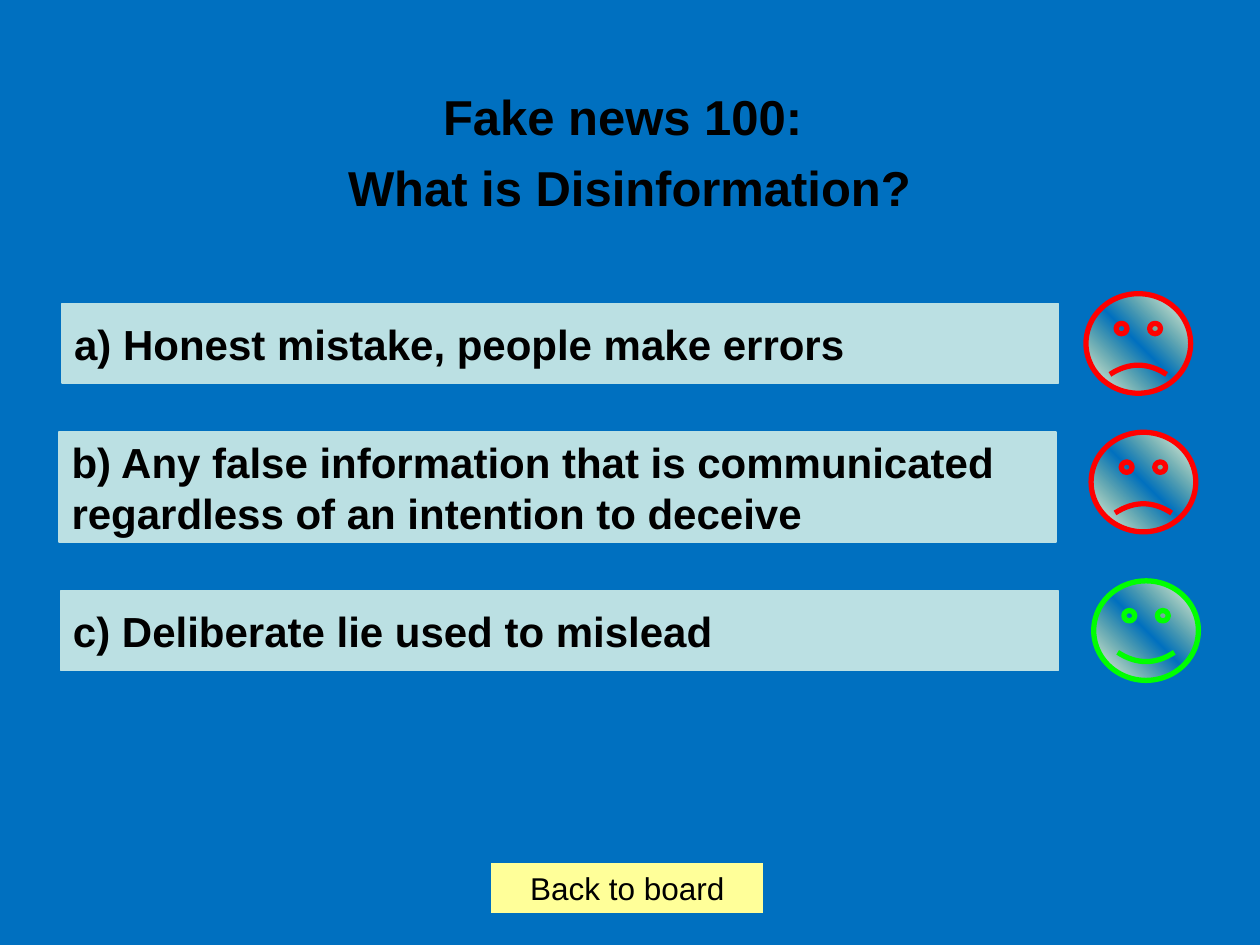
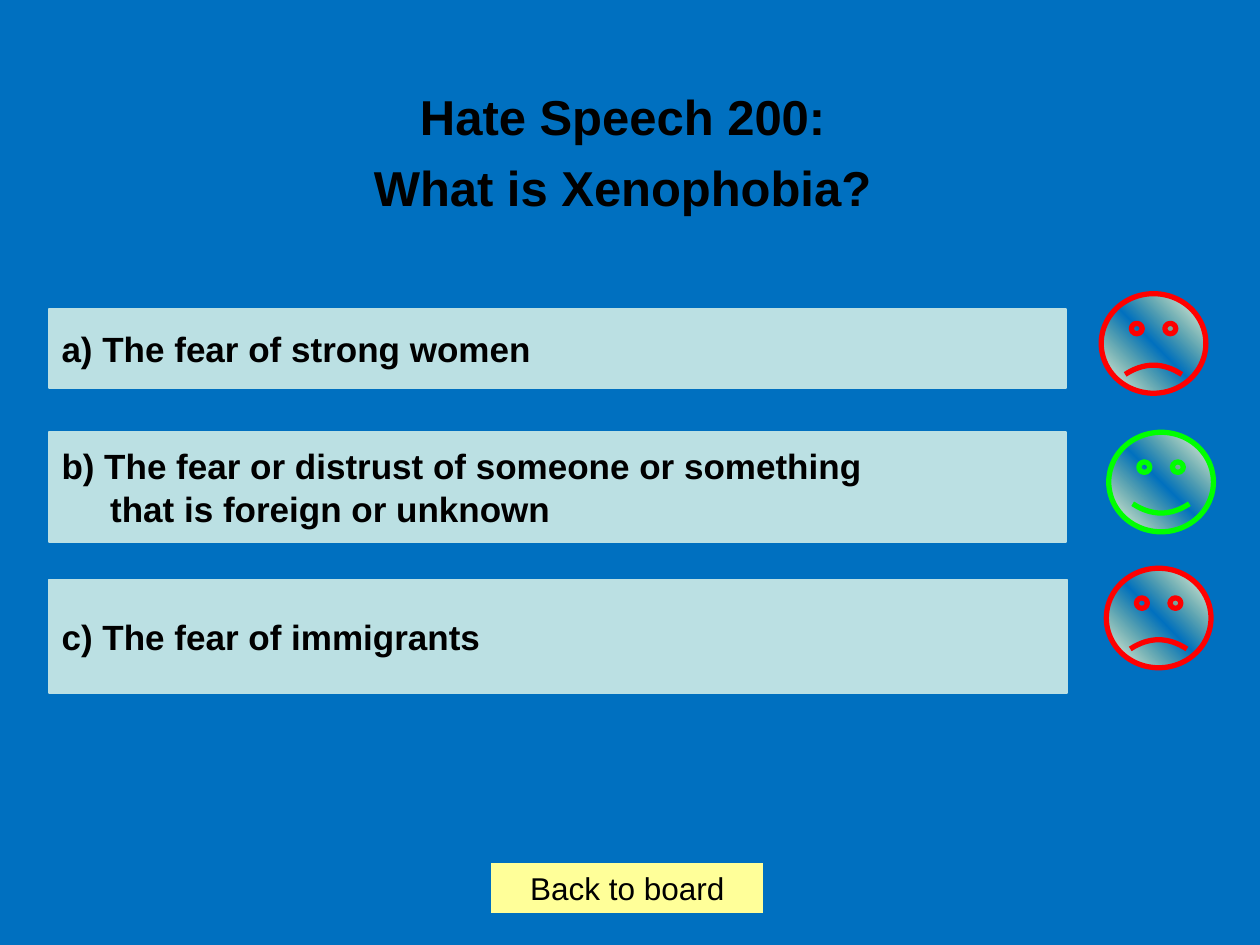
from lxml import etree
from pptx import Presentation
from pptx.dml.color import RGBColor
from pptx.enum import shapes, text
from pptx.oxml import ns
from pptx.util import Pt

HEX = {"back": "0070C0", "bar": "BBE0E3", "button": "FFFF99", "ink": "000000",
       "wrong": "FF0000", "right": "00FF00", "edge": "FFFFFF", "mid": "FFFF66"}
KIND = shapes.MSO_SHAPE
LEFT, MID = text.PP_ALIGN.LEFT, text.PP_ALIGN.CENTER
FACE_W, FACE_H = 59.8, 56.9

# answer: lines, bar box, face left and top, correct or not
QUIZ = [
    {"title": ["Fake news 100: ", "What is Disinformation?"], "size": 24, "answers": [
        (["a) Honest mistake, people make errors"],
         (35.3, 173.5, 569.5, 45.4), (620.6, 167.8), False),
        (["b) Any false information that is communicated",
          "regardless of an intention to deceive"],
         (33.8, 247, 569.5, 62.6), (623.5, 247), False),
        (["c) Deliberate lie used to mislead"],
         (34.6, 337.7, 570.2, 45.4), (625, 331.9), True)]},
    {"title": ["Hate Speech 200: ", "What is Xenophobia? "], "size": 20, "answers": [
        (["a) The fear of strong women"],
         (28.1, 176.4, 581, 45.4), (629.3, 167.8), False),
        (["b) The fear or distrust of someone or something",
          "that is foreign or unknown"],
         (28.1, 247, 581, 62.6), (633.6, 247), True),
        (["c) The fear of immigrants"],
         (28.1, 331.2, 581.8, 64.8), (632.2, 324.7), False)],
     "indent": 27.8},
]


def write(shape, lines, size, bold=True, align=LEFT, anchor=text.MSO_ANCHOR.MIDDLE,
          gap=0, indent=0):
    """Fill a shape with lines; gap parts them, indent moves all but the first."""
    frame = shape.text_frame
    frame.word_wrap = True
    frame.auto_size = text.MSO_AUTO_SIZE.NONE
    frame.vertical_anchor = anchor
    for i, line in enumerate(lines):
        para = frame.add_paragraph() if i else frame.paragraphs[0]
        para.alignment = align
        para.space_before = Pt(0)
        para.space_after = Pt(gap)
        if i and indent:
            para._p.get_or_add_pPr().set("marL", str(Pt(indent)))
        run = para.add_run()
        run.text = line
        font = run.font
        font.name, font.size, font.bold = "Arial", Pt(size), bold
        font.color.rgb = RGBColor.from_string(HEX["ink"])


def draw(slide, kind, box, fill=None, line=None, width=1):
    shape = slide.shapes.add_shape(kind, *map(Pt, box))
    shape.shadow.inherit = False
    if fill:
        shape.fill.solid()
        shape.fill.fore_color.rgb = RGBColor.from_string(HEX[fill])
    if line:
        shape.line.color.rgb = RGBColor.from_string(HEX[line])
        shape.line.width = Pt(width)
    else:
        shape.line.fill.background()
    return shape


# White at both ends, clear in the middle
SHEEN = f"""<a:gradFill xmlns:a="{ns.nsuri('a')}" rotWithShape="1"><a:gsLst>
<a:gs pos="0"><a:srgbClr val="{HEX['edge']}"/></a:gs>
<a:gs pos="50000"><a:srgbClr val="{HEX['mid']}"><a:alpha val="0"/></a:srgbClr></a:gs>
<a:gs pos="100000"><a:srgbClr val="{HEX['edge']}"/></a:gs>
</a:gsLst><a:lin ang="18900000" scaled="1"/></a:gradFill>"""

prs = Presentation()
prs.slide_width, prs.slide_height = Pt(720), Pt(540)
ground = prs.slide_master.background.fill
ground.solid()
ground.fore_color.rgb = RGBColor.from_string(HEX["back"])

for quiz in QUIZ:
    slide = prs.slides.add_slide(prs.slide_layouts[5])
    title = slide.shapes.title
    title.left, title.top, title.width, title.height = map(Pt, (28.1, 45.7, 663.1, 80))
    write(title, quiz["title"], 28, align=MID, anchor=text.MSO_ANCHOR.TOP, gap=7)

    for lines, box, spot, right in quiz["answers"]:
        bar = draw(slide, KIND.ACTION_BUTTON_CUSTOM, box, "bar", "bar")
        write(bar, lines, quiz["size"], indent=quiz.get("indent", 0))

        face = draw(slide, KIND.SMILEY_FACE, (*spot, FACE_W, FACE_H),
                    line="right" if right else "wrong", width=3)
        face.adjustments[0] = 0.047 if right else -0.047
        shape_geom = face._element.spPr.find(ns.qn("a:prstGeom"))
        shape_geom.addnext(etree.fromstring(SHEEN))

    button = draw(slide, KIND.ACTION_BUTTON_CUSTOM, (280.8, 493.2, 155.5, 28.8), "button")
    write(button, ["Back to board"], 18, bold=False, align=MID)

prs.save("out.pptx")
